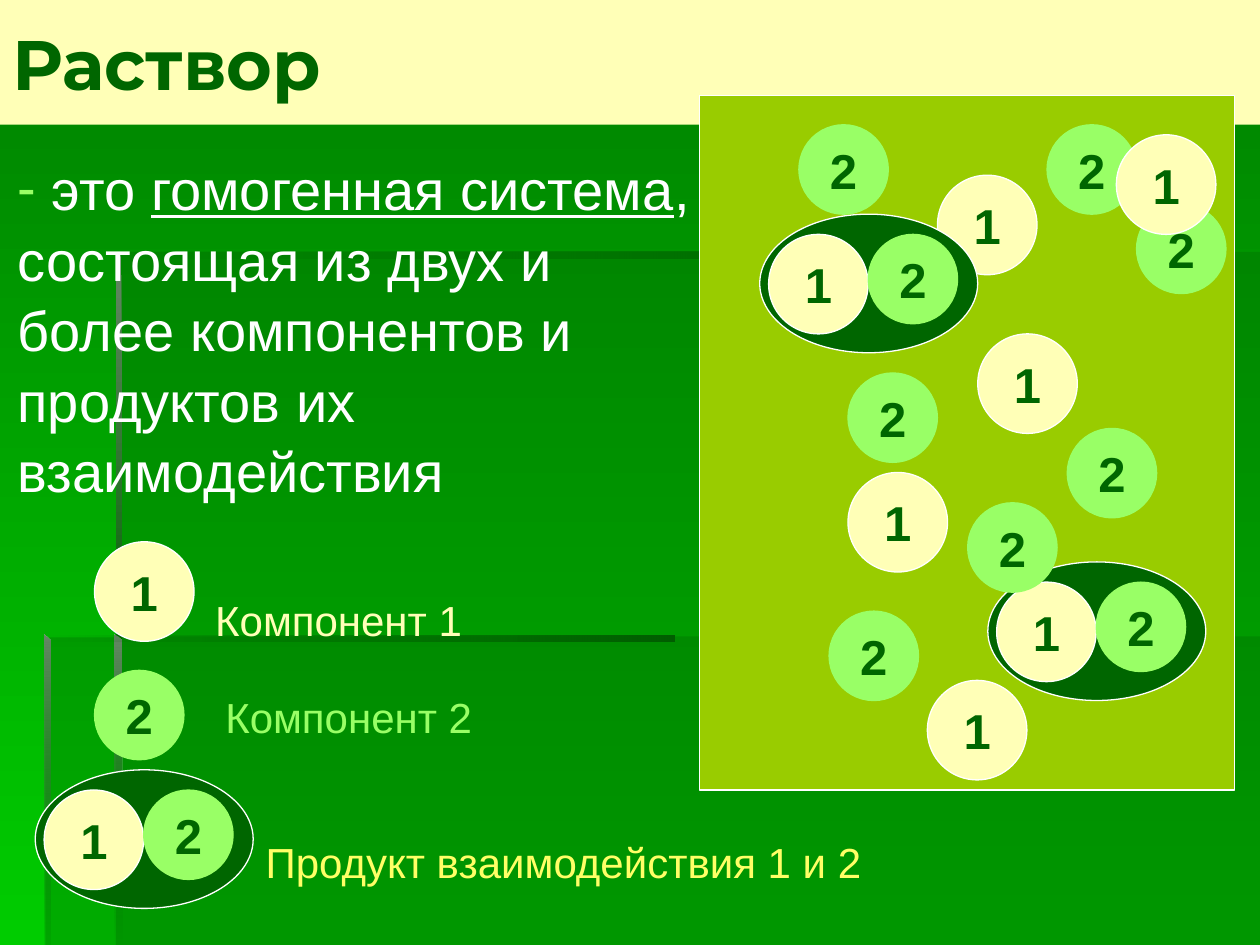
from lxml import etree
from pptx import Presentation
from pptx.dml.color import RGBColor
from pptx.enum.shapes import MSO_SHAPE
from pptx.enum.text import MSO_ANCHOR, MSO_AUTO_SIZE, PP_ALIGN
from pptx.oxml.ns import qn
from pptx.util import Inches, Pt

RECT, OVAL = MSO_SHAPE.RECTANGLE, MSO_SHAPE.OVAL
MIDDLE, TOP = MSO_ANCHOR.MIDDLE, MSO_ANCHOR.TOP
LEFT, CENTER = PP_ALIGN.LEFT, PP_ALIGN.CENTER
FIXED, GROW = MSO_AUTO_SIZE.NONE, MSO_AUTO_SIZE.SHAPE_TO_FIT_TEXT

DARK = RGBColor(0x00, 0x66, 0x00)
DEEP = RGBColor(0x00, 0x5E, 0x00)
GRAY = RGBColor(0x66, 0x86, 0x66)
CREAM = RGBColor(0xFF, 0xFF, 0xB7)
LIGHT = RGBColor(0x99, 0xFF, 0x66)
LIME = RGBColor(0x99, 0xCC, 0x00)
YELLOW = RGBColor(0xFF, 0xFF, 0x66)
WHITE = RGBColor(0xFF, 0xFF, 0xFF)
BACK_TOP = RGBColor(0x00, 0x80, 0x00)
BACK_END = RGBColor(0x00, 0xCC, 0x00)


def write(para, text, size=28, color=DARK, font="Arial", bold=False, line=None):
    """Add a formatted run to a paragraph."""
    run = para.add_run()
    run.text = text
    run.font.size = Pt(size)
    run.font.name = font
    run.font.bold = bold
    run.font.underline = line
    run.font.color.rgb = color


def shade(fill, stops, angle):
    """Fill with a two-stop gradient; the angle runs counter-clockwise."""
    fill.gradient()
    fill.gradient_angle = angle
    for stop, color in zip(fill.gradient_stops, stops):
        stop.color.rgb = color


deck = Presentation()
deck.slide_width, deck.slide_height = Inches(10), Inches(7.5)
slide = deck.slides.add_slide(deck.slide_layouts[1])
shapes = slide.shapes
shade(slide.background.fill, (BACK_TOP, BACK_END), 270)

# Backdrop: two tinted planes, then their bevelled edges.
# Each entry: points, gradient stops, angle, opacity of each colour in percent
ACROSS, DOWN = 0, 270
FADE_IN, FADE_OUT = (DARK, DEEP), (GRAY, DARK)
backdrop = [
    ([(0.92, 5.05), (0.92, 7.5), (10, 7.5), (10, 5.05)], None, None, [30]),
    ([(0.94, 5.06), (0.36, 5.06), (0.36, 7.5), (10, 7.5), (10, 2), (0.94, 2)],
     None, None, [30]),
    ([(0.92, 2), (0.92, 2.05), (8.91, 2.05), (8.91, 2)], FADE_IN, ACROSS, [0, 100]),
    ([(0.92, 2), (0.92, 5.1), (0.97, 5.1), (0.96, 2.04)], FADE_OUT, DOWN, [100, 100]),
    ([(0.91, 7.5), (0.97, 7.5), (0.96, 5.08), (0.91, 5.04)], FADE_OUT, DOWN, [100, 0]),
    ([(0.35, 5.04), (0.35, 5.09), (5.35, 5.09), (5.35, 5.04)], FADE_IN, ACROSS, [0, 100]),
    ([(0.35, 5.04), (0.35, 7.5), (0.4, 7.5), (0.4, 5.09)], FADE_OUT, DOWN, [100, 10]),
]
for points, stops, angle, alphas in backdrop:
    spots = [(Inches(x), Inches(y)) for x, y in points]
    pen = shapes.build_freeform(*spots[0])
    pen.add_line_segments(spots[1:], close=True)
    plane = pen.convert_to_shape()
    plane.shadow.inherit = False
    if stops:
        shade(plane.fill, stops, angle)
    else:
        plane.fill.solid()
        plane.fill.fore_color.rgb = DARK
    for node, alpha in zip(plane.element.iter(qn("a:srgbClr")), alphas):
        etree.SubElement(node, qn("a:alpha"), val=str(alpha * 1000))
    plane.line.fill.background()

# Title and definition, lifted above the backdrop
title, body = shapes.title, slide.placeholders[1]
for holder, box, anchor in ((title, (0, 0, 10, 0.99), MIDDLE),
                            (body, (0.04, 1.15, 5.59, 5.2), TOP)):
    holder.left, holder.top, holder.width, holder.height = map(Inches, box)
    holder.text_frame.auto_size = FIXED
    holder.text_frame.vertical_anchor = anchor
    holder.element.getparent().append(holder.element)

title.fill.solid()
title.fill.fore_color.rgb = CREAM
head = title.text_frame.paragraphs[0]
head.alignment = LEFT
write(head, "Раствор", size=40, font="Montserrat", bold=True)

first, rest = body.text_frame.paragraphs[0], body.text_frame.add_paragraph()
for para in (first, rest):
    para.line_spacing = 1.05
    para.space_before = Pt(0)
    props = para._p.get_or_add_pPr()
    props.set("marL", "0")
    props.set("indent", "0")
tint = etree.SubElement(first._p.pPr, qn("a:buClr"))
etree.SubElement(tint, qn("a:srgbClr"), val=str(LIGHT))
etree.SubElement(first._p.pPr, qn("a:buChar"), char="-")
etree.SubElement(rest._p.pPr, qn("a:buNone"))
write(first, " это ", size=32, color=WHITE)
write(first, "гомогенная система", size=32, color=WHITE, line=True)
write(first, ",", size=32, color=WHITE)
write(rest, "состоящая из двух и более компонентов и продуктов их взаимодействия",
      size=32, color=WHITE)

# Vessel with the solution
vessel = shapes.add_shape(RECT, Inches(5.55), Inches(0.76), Inches(4.25), Inches(5.51))
vessel.shadow.inherit = False
vessel.fill.solid()
vessel.fill.fore_color.rgb = LIME
vessel.line.color.rgb = WHITE
vessel.line.width = Pt(0.75)

# Particles from back to front; a product holds one particle of each component
STYLES = {"1": (0.79, 0.79, CREAM, WHITE),
          "2": (0.71, 0.71, LIGHT, LIGHT),
          "": (1.73, 1.1, DARK, WHITE)}
particles = [
    ("1", 7.44, 1.39), ("2", 8.31, 0.99), ("1", 7.76, 2.65), ("2", 9.02, 1.62),
    ("", 7.84, 4.46), ("2", 8.47, 3.4), ("1", 6.73, 3.75), ("", 6.03, 1.7),
    ("2", 6.58, 4.85), ("1", 0.75, 4.3), ("2", 0.75, 5.32), ("", 0.28, 6.11),
    ("2", 7.68, 3.99), ("1", 7.36, 5.4), ("1", 8.86, 1.07), ("2", 6.73, 2.96),
    ("2", 6.34, 0.99),
]
for mark, x, y in particles:
    group = [(mark, x, y)]
    if not mark:
        group += [("1", x + 0.07, y + 0.16), ("2", x + 0.86, y + 0.16)]
    for name, left, top in group:
        wide, high, fill, edge = STYLES[name]
        ball = shapes.add_shape(OVAL, Inches(left), Inches(top), Inches(wide), Inches(high))
        ball.shadow.inherit = False
        ball.fill.solid()
        ball.fill.fore_color.rgb = fill
        ball.line.color.rgb = edge
        ball.line.width = Pt(0.75)
        if name:
            frame = ball.text_frame
            frame.word_wrap = False
            frame.vertical_anchor = MIDDLE
            frame.paragraphs[0].alignment = CENTER
            write(frame.paragraphs[0], name, bold=True)

# Legend
for text, x, y, wide, color in (
        ("Компонент 1", 1.61, 4.67, 2.16, CREAM),
        ("Компонент 2", 1.69, 5.44, 2.16, LIGHT),
        ("Продукт взаимодействия 1 и 2", 2.01, 6.59, 4.94, YELLOW)):
    label = shapes.add_textbox(Inches(x), Inches(y), Inches(wide), Inches(0.5))
    label.text_frame.word_wrap = False
    label.text_frame.auto_size = GROW
    write(label.text_frame.paragraphs[0], text, size=24, color=color)

deck.save("out.pptx")
